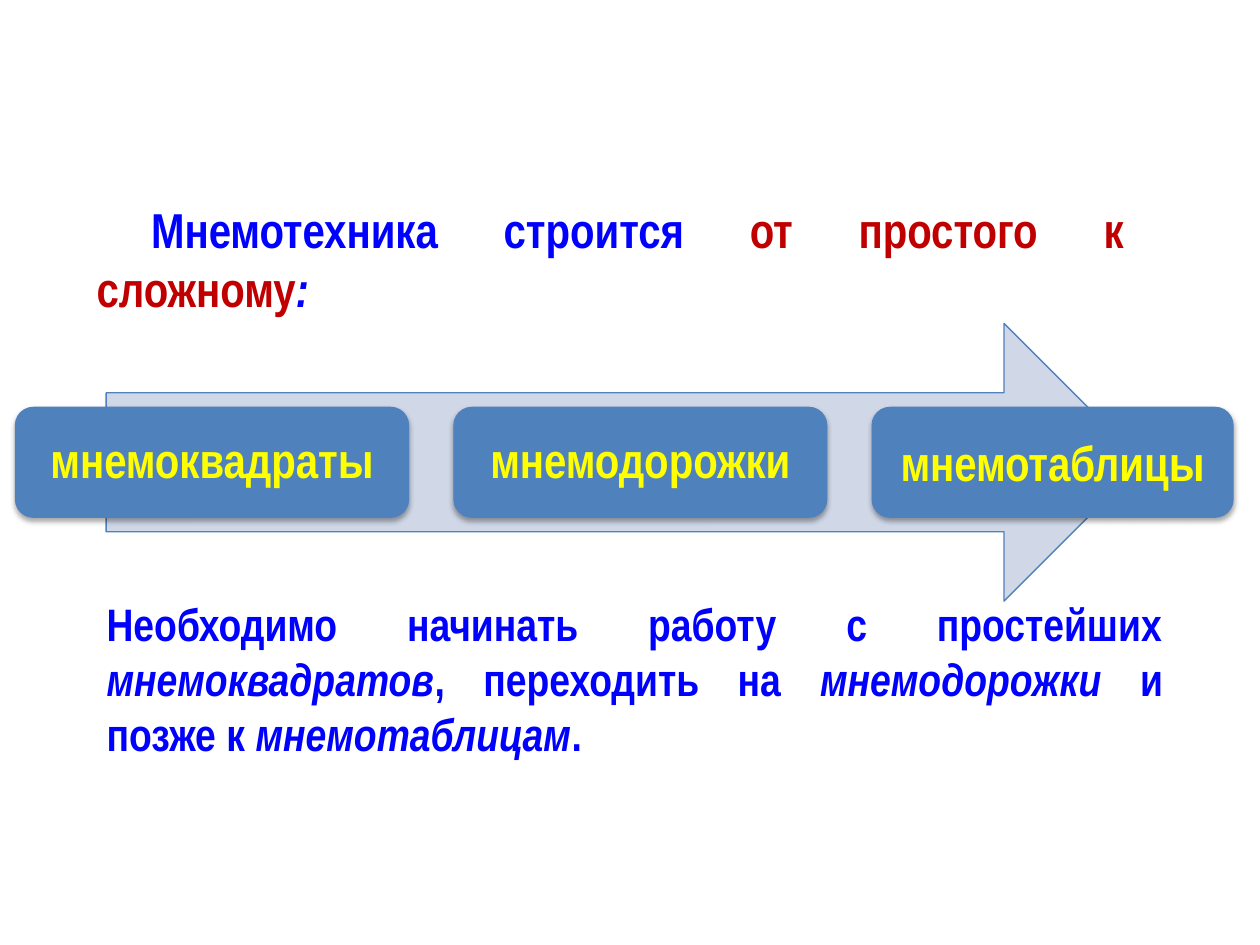
"""Build a slide on mnemonic techniques going from simple to complex."""
from lxml.etree import SubElement
from pptx import Presentation
from pptx.dml.color import RGBColor as Rgb
from pptx.enum.shapes import MSO_SHAPE as Shape
from pptx.enum.text import MSO_ANCHOR as Anchor, PP_ALIGN as Align
from pptx.oxml.ns import qn
from pptx.util import Cm, Pt

COLORS = {
    "blue": "0000FF", "red": "C00000", "yellow": "FFFF00",
    "box": "4F81BD", "arrow": "D0D8E8", "shadow": "000000",
}
HEADING = [
    ("Мнемотехника строится ", "blue", False),
    ("от простого к сложному", "red", False),
    (":", "blue", True),
]
ADVICE = [
    ("Необходимо начинать работу с простейших ", "blue", False),
    ("мнемоквадратов", "blue", True),
    (", переходить на ", "blue", False),
    ("мнемодорожки", "blue", True),
    (" и позже к ", "blue", False),
    ("мнемотаблицам", "blue", True),
    (".", "blue", False),
]
STEPS = [("мнемоквадраты", 7.95, 0.9), ("мнемодорожки", 7.54, 0.9), ("мнемотаблицы", 7.3, 1.0)]
STEP_LEFT, STEP_TOP, STEP_HEIGHT, STEP_GAP = 0.3, 8.2, 2.24, 0.89


def color(name):
    return Rgb.from_string(COLORS[name])


def write(paragraph, runs, size, **paragraph_format):
    for name, value in paragraph_format.items():
        setattr(paragraph, name, value)
    for text, color_name, italic in runs:
        run = paragraph.add_run()
        run.text = text
        font = {"name": "Arial Narrow", "size": Pt(size), "bold": True, "italic": italic}
        for name, value in font.items():
            setattr(run.font, name, value)
        run.font.color.rgb = color(color_name)


def add_text(slide, place, runs, size, indent=0):
    frame = slide.shapes.add_textbox(*map(Cm, place)).text_frame
    frame.word_wrap = True
    paragraph = frame.paragraphs[0]
    paragraph._p.get_or_add_pPr().set("indent", str(Cm(indent)))
    write(paragraph, runs, size, alignment=Align.JUSTIFY)


def add_block(slide, kind, place, fill):
    shape = slide.shapes.add_shape(kind, *map(Cm, place))
    shape.shadow.inherit = False
    shape.fill.solid()
    shape.fill.fore_color.rgb = color(fill)
    return shape


def add_shadow(shape):
    effects = shape._element.spPr.find(qn("a:effectLst"))
    shadow = SubElement(effects, qn("a:outerShdw"), blurRad=str(Pt(3.1)),
                        dist=str(Pt(1.8)), dir="5400000", rotWithShape="0")
    tint = SubElement(shadow, qn("a:srgbClr"), val=COLORS["shadow"])
    SubElement(tint, qn("a:alpha"), val="35000")


def add_steps(slide):
    left = STEP_LEFT
    for label, width, spacing in STEPS:
        box = add_block(slide, Shape.ROUNDED_RECTANGLE,
                        (left, STEP_TOP, width, STEP_HEIGHT), "box")
        box.line.fill.background()
        add_shadow(box)
        box.text_frame.word_wrap = True
        box.text_frame.vertical_anchor = Anchor.MIDDLE
        write(box.text_frame.paragraphs[0], [(label, "yellow", False)], 28,
              alignment=Align.CENTER, line_spacing=spacing)
        left += width + STEP_GAP


def main():
    presentation = Presentation()
    presentation.slide_width, presentation.slide_height = Cm(25.4), Cm(19.05)
    slide = presentation.slides.add_slide(presentation.slide_layouts[6])
    add_text(slide, (1.7, 3.9, 21.2, 2.65), HEADING, 28, indent=1.1)
    arrow = add_block(slide, Shape.RIGHT_ARROW, (2.14, 6.52, 20.9, 5.6), "arrow")
    arrow.line.color.rgb = color("box")
    arrow.line.width = Pt(0.75)
    add_steps(slide)
    add_text(slide, (1.9, 11.9, 21.8, 3.58), ADVICE, 26)
    presentation.save("out.pptx")


if __name__ == "__main__":
    main()
